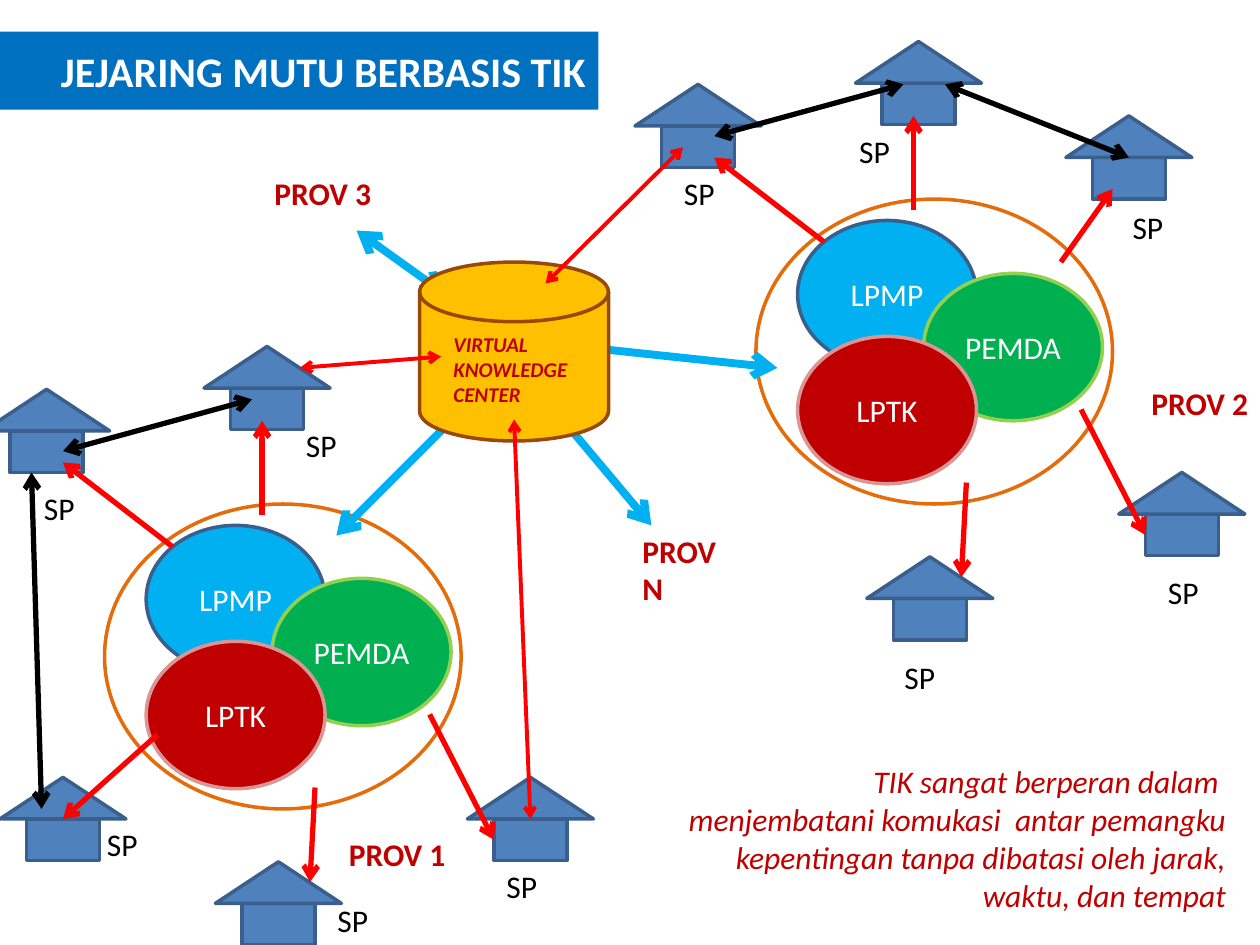
from lxml.etree import SubElement
from pptx import Presentation
from pptx.dml.color import RGBColor
from pptx.enum.shapes import MSO_CONNECTOR as CONN, MSO_SHAPE as SHAPE
from pptx.enum.text import MSO_ANCHOR as ANCHOR, MSO_AUTO_SIZE as AUTO, PP_ALIGN as ALIGN
from pptx.oxml.ns import qn
from pptx.util import Inches, Pt

COLORS = {
    "white": "FFFFFF", "black": "000000", "red": "FF0000", "crimson": "C00000",
    "title": "0070C0", "sky": "00B0F0", "green": "00B050", "lime": "92D050",
    "pink": "D99694", "orange": "E46C0A", "house": "4F81BD", "navy": "3A5F8C",
    "gold": "FFC000", "brown": "984807",
}
TOP, LEFT = 0, 1  # connection sites of a rectangle

# Offsets from the top left corner of a province's ring
MEMBERS = [("LPMP", 0.33, 0.17, "sky", "navy"),
           ("PEMDA", 1.33, 0.59, "green", "lime"),
           ("LPTK", 0.33, 1.09, "crimson", "pink")]
HOUSES = {"north": (0.79, -1.25), "east": (2.88, 2.17),
          "south": (0.88, 2.84), "west": (-0.96, -0.91)}
SPOKES = [((0.54, 0.34), (-0.33, -0.33)),
          ((1.25, 0.09), (1.25, -0.66)),
          ((1.67, 2.25), (1.63, 3.0))]


def rgb(name):
    return RGBColor.from_string(COLORS[name])


class Canvas:
    font = "Calibri"
    outline = 2

    def __init__(self, slide):
        self.s = slide

    def add_lines(self, tf, lines, size=18, color="black", bold=None, italic=None,
                  align=ALIGN.LEFT):
        for i, line in enumerate(lines):
            p = tf.add_paragraph() if i else tf.paragraphs[0]
            p.alignment = align
            r = p.add_run()
            r.text = line
            r.font.name, r.font.size = self.font, Pt(size)
            r.font.bold, r.font.italic = bold, italic
            r.font.color.rgb = rgb(color)

    def title(self, text, x, y, w, h):
        sp = self.s.shapes.title
        sp.left, sp.top, sp.width, sp.height = map(Inches, (x, y, w, h))
        geom = SubElement(sp.element.spPr, qn("a:prstGeom"), prst="roundRect")
        guides = SubElement(geom, qn("a:avLst"))
        SubElement(guides, qn("a:gd"), name="adj", fmla="val 33200")
        sp.fill.solid()
        sp.fill.fore_color.rgb = rgb("title")
        tf = sp.text_frame
        tf.auto_size, tf.vertical_anchor = AUTO.NONE, ANCHOR.MIDDLE
        self.add_lines(tf, [text], 24, "white", bold=True, align=ALIGN.RIGHT)

    def shape(self, kind, x, y, w, h, fill, line, text=None):
        sp = self.s.shapes.add_shape(kind, *map(Inches, (x, y, w, h)))
        sp.shadow.inherit = False
        if fill:
            sp.fill.solid()
            sp.fill.fore_color.rgb = rgb(fill)
        else:
            sp.fill.background()
        sp.line.color.rgb = rgb(line)
        sp.line.width = Pt(self.outline)
        if text:
            sp.text_frame.vertical_anchor = ANCHOR.MIDDLE
            self.add_lines(sp.text_frame, [text], color="white", align=ALIGN.CENTER)
        return sp

    def text(self, lines, x, y, w, h, wrap=True, **style):
        sp = self.s.shapes.add_textbox(*map(Inches, (x, y, w, h)))
        sp.text_frame.word_wrap = wrap
        self.add_lines(sp.text_frame, lines, **style)
        return sp

    def label(self, text, x, y, w, **style):
        return self.text([text], x, y, w, 0.4, wrap=False, **style)

    def arrow(self, start, end, color="red", width=3, both=False):
        """Draw an arrow; each end is a point (x, y) or a joint (shape, site)."""
        points = [(0, 0) if hasattr(e[0], "shape_id") else e for e in (start, end)]
        c = self.s.shapes.add_connector(CONN.STRAIGHT, *(Inches(v) for pt in points for v in pt))
        for joint, connect in ((start, c.begin_connect), (end, c.end_connect)):
            if hasattr(joint[0], "shape_id"):
                connect(*joint)
        c.line.color.rgb = rgb(color)
        c.line.width = Pt(width)
        ln = c.element.spPr.find(qn("a:ln"))
        for tag in ("a:headEnd", "a:tailEnd") if both else ("a:tailEnd",):
            SubElement(ln, qn(tag), type="arrow")
        SubElement(c.element.spPr, qn("a:effectLst"))

    def house(self, x, y):
        """Draw walls and a roof, and return the walls."""
        walls = self.shape(SHAPE.RECTANGLE, x + 0.21, y + 0.33, 0.58, 0.33, "house", "navy")
        self.shape(SHAPE.ISOSCELES_TRIANGLE, x, y, 1, 0.33, "house", "navy")
        return walls

    def province(self, x, y, extra_house):
        """Draw a province's ring, members and houses, and return the walls."""
        for name, dx, dy, fill, line in MEMBERS:
            self.shape(SHAPE.OVAL, x + dx, y + dy, 1.42, 1.17, fill, line, name)
        self.shape(SHAPE.OVAL, x, y, 2.83, 2.42, None, "orange")
        houses = {**HOUSES, "extra": extra_house}
        walls = {k: self.house(x + dx, y + dy) for k, (dx, dy) in houses.items()}
        for (x1, y1), (x2, y2) in SPOKES:
            self.arrow((x + x1, y + y1), (x + x2, y + y2))
        self.arrow((x + 2.58, y + 1.67), (walls["east"], LEFT))
        return walls

    def knowledge_center(self):
        disk = self.shape(SHAPE.FLOWCHART_MAGNETIC_DISK, 3.33, 2.08, 1.5, 1.42, "gold", "brown")
        name = self.text(["VIRTUAL", "KNOWLEDGE", "CENTER"], 3.5, 2.58, 1.58, 0.71,
                         size=12, color="crimson", bold=True, italic=True)
        self.s.shapes.add_group_shape([disk, name])


def main():
    prs = Presentation()
    prs.slide_width, prs.slide_height = Inches(10), Inches(7.5)
    c = Canvas(prs.slides.add_slide(prs.slide_layouts[5]))
    c.title("JEJARING MUTU BERBASIS TIK", -0.33, 0.25, 5.08, 0.62)

    prov2 = c.province(6, 1.58, extra_house=(2.46, -0.66))
    c.arrow((8.42, 2.08), (8.83, 1.5))
    prov1 = c.province(0.83, 4, extra_house=(-0.83, 2.17))
    c.arrow((1.25, 5.83), (prov1["extra"], TOP))

    for start, end in [((4.58, 2.75), (6.17, 2.92)), ((3.75, 3.17), (2.67, 4.25)),
                       ((3.54, 2.34), (2.83, 1.83)), ((4.33, 3.17), (5.17, 4.17))]:
        c.arrow(start, end, "sky", 4.5, both=True)
    for name, x, y in [("PROV 1", 2.67, 6.58), ("PROV 2", 9.04, 3),
                       ("PROV 3", 2.08, 1.33), ("PROV N", 5, 4.17)]:
        c.label(name, x, y, 0.98, color="crimson", bold=True)

    c.knowledge_center()
    for start, end in [((4.08, 3.33), (prov1["east"], TOP)),
                       ((4.33, 2.25), (5.42, 1.17)), ((2.38, 2.92), (3.5, 2.83))]:
        c.arrow(start, end, width=2.25, both=True)

    for x, y in [(5.33, 1.33), (6.72, 1), (8.89, 1.6), (9.17, 4.5), (7.08, 5.17),
                 (3.92, 6.83), (2.58, 7.1), (0.75, 6.5), (0.25, 3.83), (2.33, 3.33)]:
        c.label("SP", x, y, 0.45)

    for start, end in [((2, 3.17), (0.5, 3.58)), ((0.33, 6.42), (0.25, 3.75)),
                       ((7.17, 0.67), (5.67, 1.08)), ((prov2["extra"], TOP), (7.5, 0.67))]:
        c.arrow(start, end, "black", both=True)

    c.text(["TIK sangat berperan dalam  menjembatani komukasi  antar pemangku "
            "kepentingan tanpa dibatasi oleh jarak, waktu, dan tempat"],
           5.33, 6, 4.5, 1.31, color="crimson", italic=True, align=ALIGN.RIGHT)
    prs.save("out.pptx")


if __name__ == "__main__":
    main()
